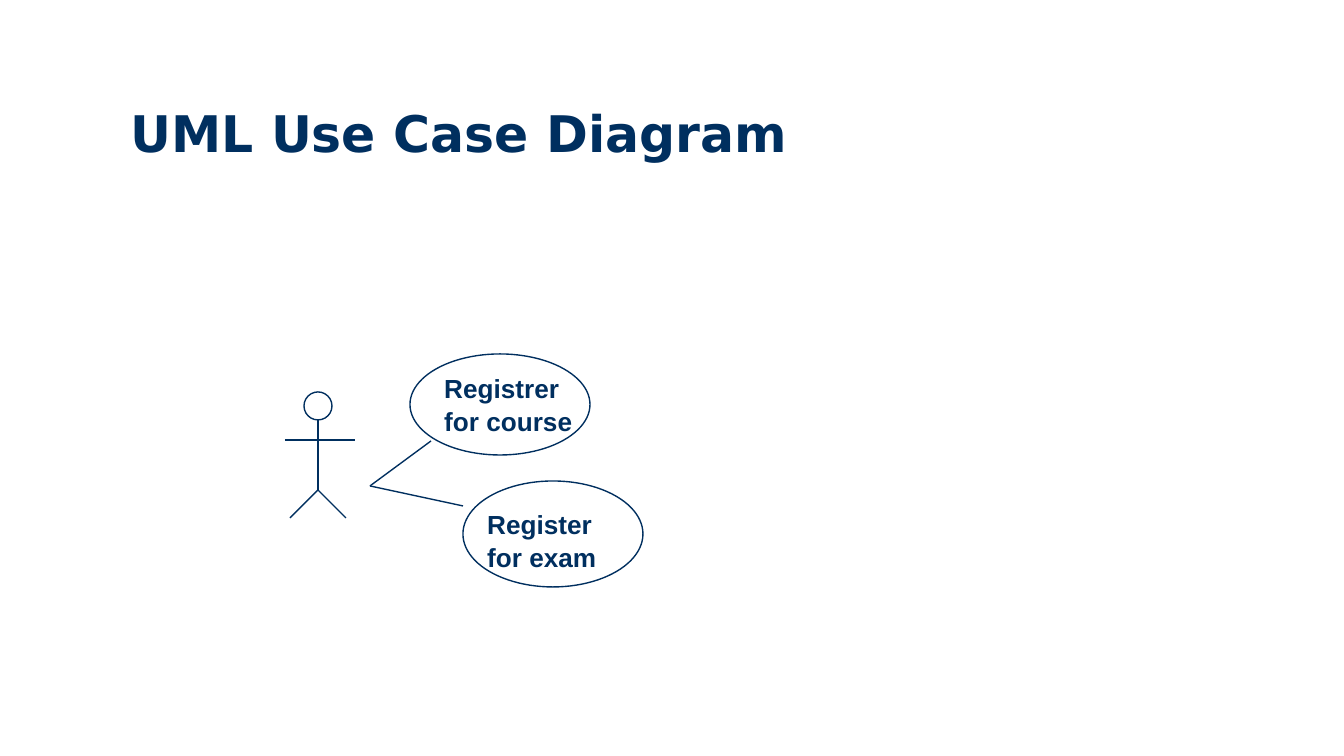
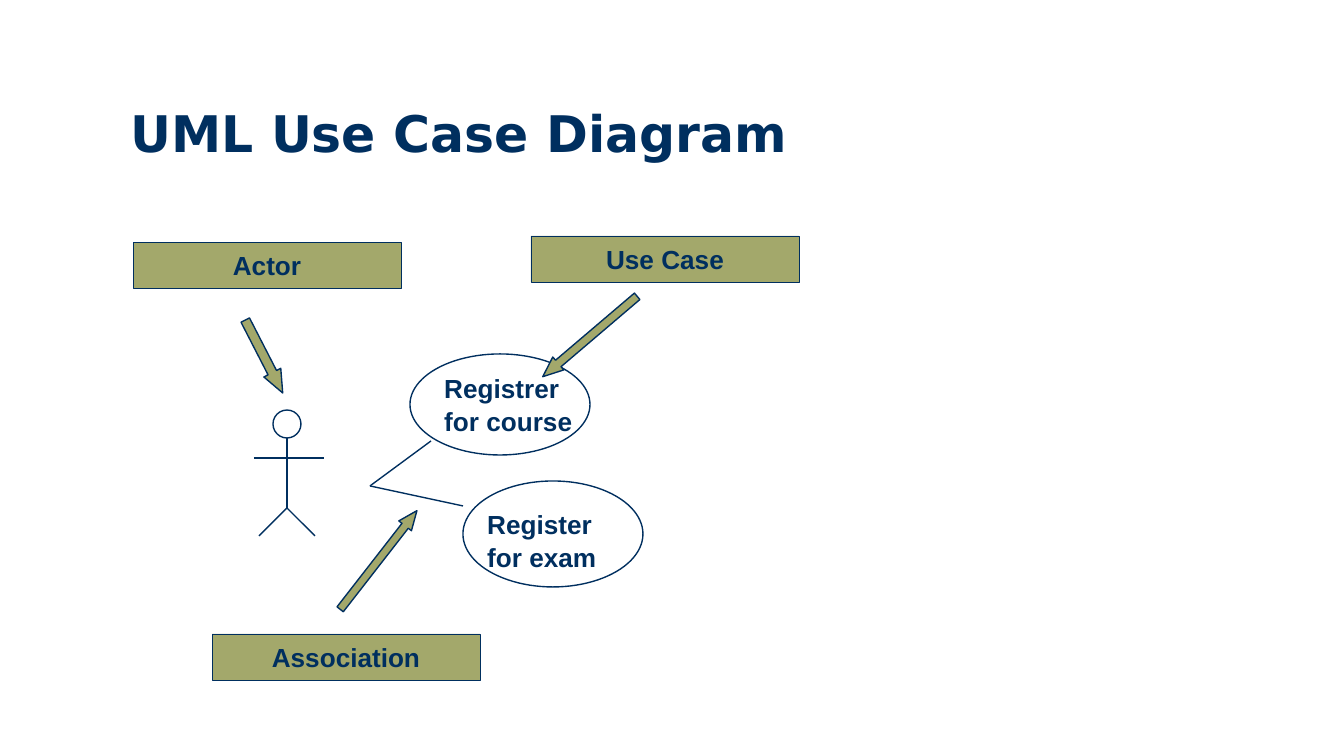
from dataclasses import dataclass

from lxml.etree import SubElement
from pptx import Presentation
from pptx.dml.color import RGBColor as RGB
from pptx.enum.shapes import MSO_CONNECTOR as LINK, MSO_SHAPE as SHAPE
from pptx.enum.text import MSO_ANCHOR as ANCHOR, PP_ALIGN as ALIGN
from pptx.oxml.ns import qn
from pptx.util import Pt

PX = 914400 / 134.4
SIZE = (1344, 756)

TITLE = "UML Use Case Diagram"
TITLE_BOX = (117, 93, 1007, 87)

# Oval box, text corner, lines of text
CASES = [
    ((410, 354, 180, 101), (431, 364), ["Registrer", "for course"]),
    ((463, 481, 180, 106), (474, 500), ["Register", "for exam"]),
]
CASE_TEXT = (191, 77)
HUB = (370, 486)
ENDS = [(431, 441), (463, 506)]

# Parts of the stick figure, from its top left corner
HEAD = (19, 0, 28, 28)
HIP = (33, 98)
LIMBS = [((33, 28), HIP), (HIP, (5, 126)), (HIP, (61, 126)), ((0, 48), (70, 48))]

LABEL = (268, 46)
LABELS = [("Actor", (133, 242)), ("Use Case", (531, 236)), ("Association", (212, 634))]
# Box before turning, angle
ARROWS = [
    ((223, 347, 82, 19), 242.8),
    ((528, 328, 124, 17), 319.6),
    ((316, 552, 125, 16), 127.9),
]
ARROW_HEAD = (0.5, 1.204)

# Actor corner, whether the parts are named
SLIDES = [((285, 392), False), ((254, 410), True)]


@dataclass(frozen=True)
class Theme:
    ink: RGB = RGB.from_string("002F5F")
    paper: RGB = RGB.from_string("FFFFFF")
    olive: RGB = RGB.from_string("A3A86B")
    thin: float = 0.25
    line: float = 0.75


THEME = Theme()
HEADING = {"name": "DejaVu Sans", "size": Pt(27), "bold": True}
BODY = {"name": "Arial", "size": Pt(14), "bold": True}


def emu(vals):
    return [round(v * PX) for v in vals]


def shift(points, by):
    return [(x + by[0], y + by[1]) for x, y in points]


def write(frame, lines, font, **form):
    """Fill a text frame; form holds paragraph settings."""
    frame.word_wrap = True
    for i, line in enumerate(lines):
        para = frame.add_paragraph() if i else frame.paragraphs[0]
        para.text = line
        for key, val in form.items():
            setattr(para, key, val)
        for key, val in font.items():
            setattr(para.font, key, val)
        para.font.color.rgb = THEME.ink


def add_text(slide, box, lines, font, spacing, anchor=ANCHOR.TOP):
    frame = slide.shapes.add_textbox(*emu(box)).text_frame
    frame.vertical_anchor = anchor
    write(frame, lines, font, line_spacing=spacing)


def add_form(shapes, kind, box, fill=THEME.paper, width=THEME.line):
    form = shapes.add_shape(kind, *emu(box))
    form.shadow.inherit = False
    form.fill.solid()
    form.fill.fore_color.rgb = fill
    form.line.color.rgb = THEME.ink
    form.line.width = Pt(width)
    return form


def add_line(shapes, start, end):
    line = shapes.add_connector(LINK.STRAIGHT, *emu(start + end))
    line.line.color.rgb = THEME.ink
    line.line.width = Pt(THEME.line)
    SubElement(line._element.spPr, qn("a:effectLst"))


def add_actor(slide, at):
    parts = slide.shapes.add_group_shape().shapes
    x, y, w, h = HEAD
    add_form(parts, SHAPE.OVAL, (at[0] + x, at[1] + y, w, h))
    for limb in LIMBS:
        add_line(parts, *shift(limb, at))


def add_label(slide, text, at):
    box = add_form(slide.shapes, SHAPE.RECTANGLE, at + LABEL, THEME.olive, THEME.thin)
    box.text_frame.vertical_anchor = ANCHOR.MIDDLE
    write(box.text_frame, [text], BODY, alignment=ALIGN.CENTER)


def add_arrow(slide, box, angle):
    arrow = add_form(slide.shapes, SHAPE.LEFT_ARROW, box, THEME.olive)
    for i, val in enumerate(ARROW_HEAD):
        arrow.adjustments[i] = val
    arrow.rotation = angle


def add_slide(deck, actor, named):
    slide = deck.slides.add_slide(deck.slide_layouts[6])
    add_text(slide, TITLE_BOX, [TITLE], HEADING, 0.9, ANCHOR.MIDDLE)
    for oval, _, _ in CASES:
        add_form(slide.shapes, SHAPE.OVAL, oval)
    add_actor(slide, actor)
    for end in ENDS:
        add_line(slide.shapes, HUB, end)
    for _, at, lines in CASES:
        add_text(slide, at + CASE_TEXT, lines, BODY, 1.05)
    if named:
        for text, at in LABELS:
            add_label(slide, text, at)
        for box, angle in ARROWS:
            add_arrow(slide, box, angle)


def main():
    deck = Presentation()
    deck.slide_width, deck.slide_height = emu(SIZE)
    for actor, named in SLIDES:
        add_slide(deck, actor, named)
    deck.save("out.pptx")


if __name__ == "__main__":
    main()
